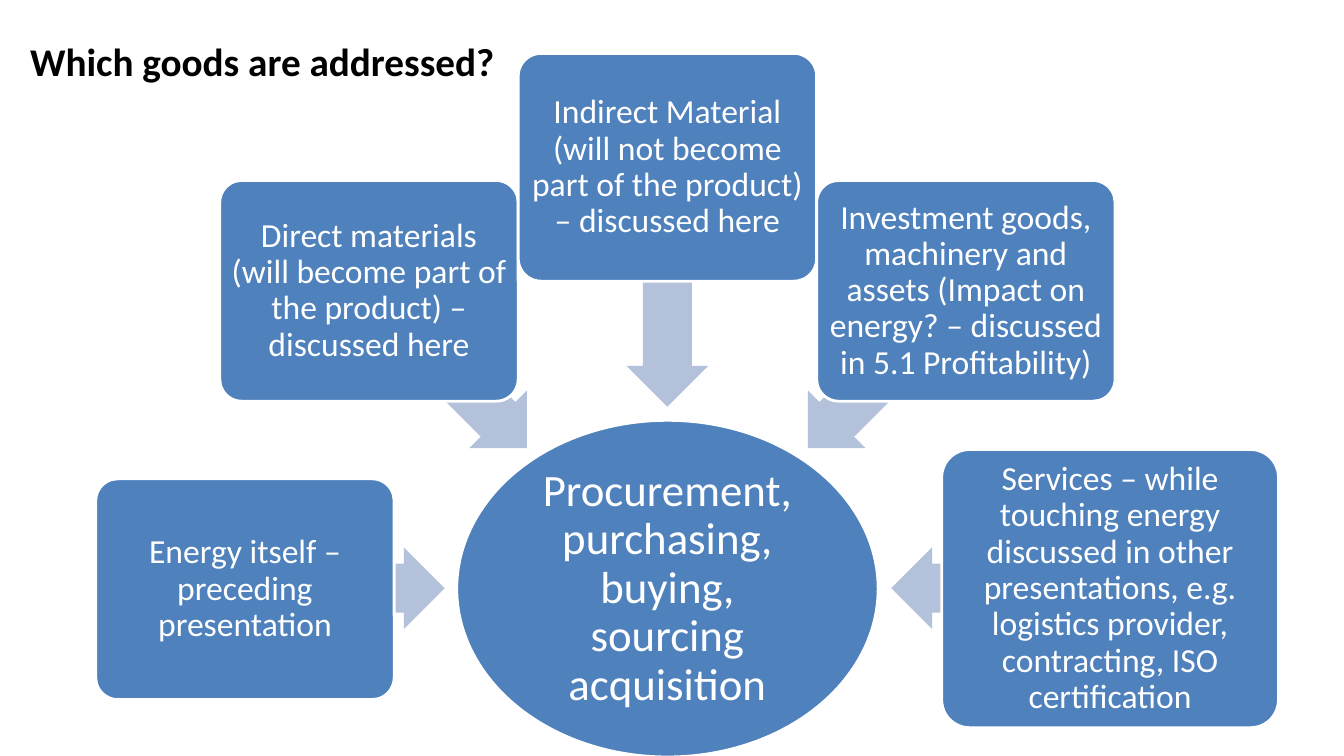
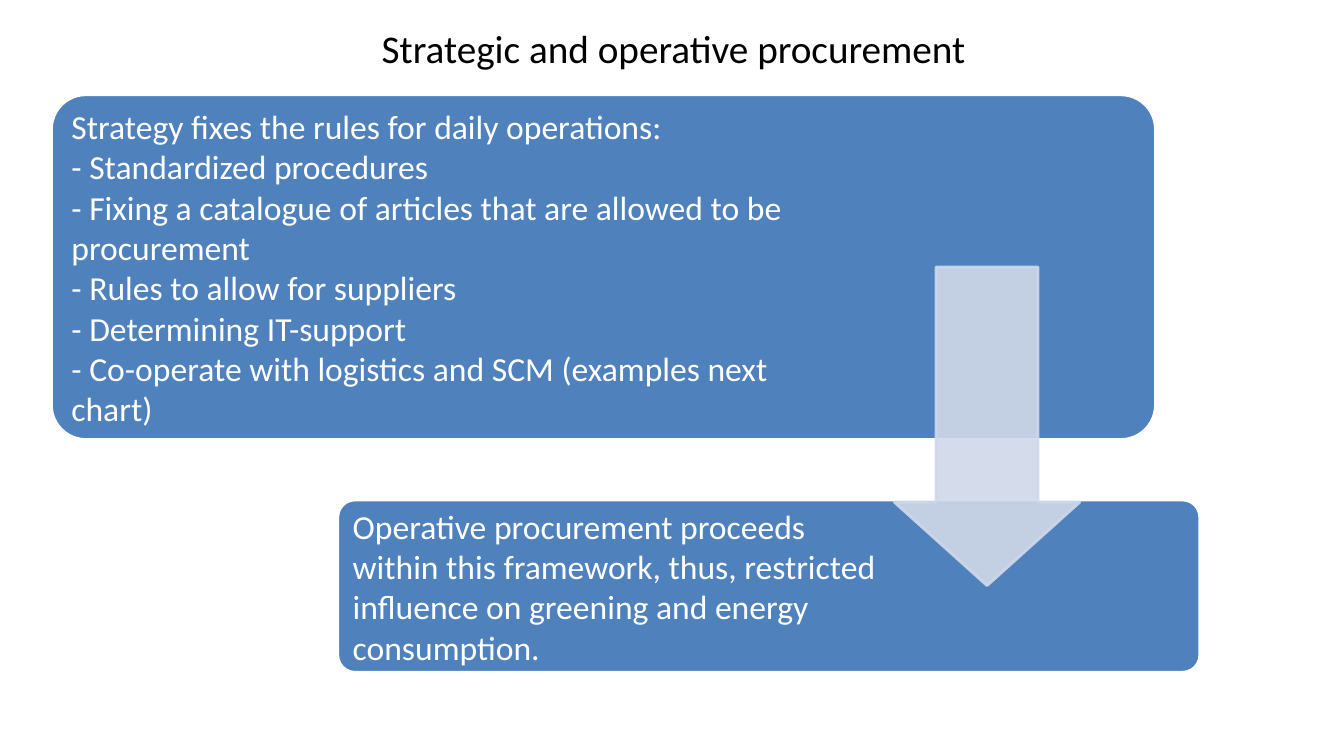
from dataclasses import dataclass

import pptx
import pptx.dml.color
import pptx.enum.shapes
import pptx.enum.text
import pptx.oxml
import pptx.oxml.ns
import pptx.util

Inches = pptx.util.Inches
Pt = pptx.util.Pt
SHAPES = pptx.enum.shapes.MSO_SHAPE
ALIGN = pptx.enum.text.PP_ALIGN
MIDDLE = pptx.enum.text.MSO_ANCHOR.MIDDLE

# Shared style
FONT = "Calibri"
BLUE, PALE_BLUE, LIGHT_BLUE = "4F81BD", "B3C1DB", "D0D8E8"
WHITE, BLACK = "FFFFFF", "000000"
TITLE_SIZE, HUB_SIZE, BODY_SIZE = 28, 32, 24
ARROW_HEIGHT = 0.81


@dataclass(frozen=True)
class Box:
    left: float
    top: float
    width: float
    height: float

    def lengths(self) -> tuple:
        return tuple(map(Inches, (self.left, self.top, self.width, self.height)))


@dataclass(frozen=True)
class Goods:
    text: str
    box: Box
    arrow_left: float
    arrow_top: float
    arrow_length: float
    arrow_rotation: int


@dataclass(frozen=True)
class Level:
    lines: tuple[str, ...]
    box: Box
    right_inset: float


GOODS = (
    Goods("Energy itself –preceding presentation",
          Box(0.95, 4.75, 2.96, 2.19), 2.43, 5.43, 1.98, 180),
    Goods("Direct materials (will become part of the product) – discussed here",
          Box(2.18, 1.79, 2.96, 2.19), 3.34, 3.26, 2.21, 225),
    Goods("Indirect Material (will not become part of the product) – discussed here",
          Box(5.14, 0.53, 2.96, 2.26), 5.43, 2.44, 2.38, 270),
    Goods("Investment goods, machinery and assets (Impact on energy? – discussed "
          "in 5.1 Profitability)",
          Box(8.1, 1.79, 2.96, 2.19), 7.69, 3.26, 2.21, 315),
    Goods("Services – while touching energy discussed in other presentations, "
          "e.g. logistics provider, contracting, ISO certification",
          Box(9.34, 4.46, 3.34, 2.76), 8.84, 5.43, 2.18, 0),
)

LEVELS = (
    Level(("Strategy fixes the rules for daily operations:",
           "- Standardized procedures",
           "- Fixing a catalogue of articles that are allowed to be procurement",
           "- Rules to allow for suppliers",
           "- Determining IT-support",
           "- Co-operate with logistics and SCM (examples next chart)"),
          Box(0.51, 0.94, 10.95, 3.42), 3.07),
    Level(("Operative procurement proceeds within this framework, thus, "
           "restricted influence on greening and energy consumption.",),
          Box(3.35, 4.96, 8.55, 1.71), 3.16),
)


def rgb(color: str) -> pptx.dml.color.RGBColor:
    return pptx.dml.color.RGBColor.from_string(color)


def write(shape, lines: tuple[str, ...], size: int, color: str, align,
          spacing: float = 1.0, bold: bool = False) -> None:
    frame = shape.text_frame
    frame.word_wrap = True
    frame.vertical_anchor = MIDDLE
    frame.text = "\n".join(lines)
    for paragraph in frame.paragraphs:
        paragraph.alignment = align
        paragraph.line_spacing = spacing
        paragraph.font.name = FONT
        paragraph.font.size = Pt(size)
        paragraph.font.bold = bold
        paragraph.font.color.rgb = rgb(color)


def set_insets(shape, inset: float, right: float | None = None) -> None:
    frame = shape.text_frame
    frame.margin_left = frame.margin_top = frame.margin_bottom = Inches(inset)
    frame.margin_right = Inches(inset if right is None else right)


def add_title(slide, text: str, box: Box, align, bold: bool = False) -> None:
    write(slide.shapes.add_textbox(*box.lengths()), (text,), TITLE_SIZE, BLACK,
          align, bold=bold)


def add_shape(slide, kind, box: Box, fill: str, line: str | None = None,
              adjustments: tuple[float, ...] = ()):
    shape = slide.shapes.add_shape(kind, *box.lengths())
    shape.shadow.inherit = False
    shape.fill.solid()
    shape.fill.fore_color.rgb = rgb(fill)
    if line:
        shape.line.color.rgb = rgb(line)
        shape.line.width = Pt(2)
    else:
        shape.line.fill.background()
    for index, value in enumerate(adjustments):
        shape.adjustments[index] = value
    return shape


def add_card(slide, box: Box):
    return add_shape(slide, SHAPES.ROUNDED_RECTANGLE, box, BLUE, WHITE, (0.1,))


def set_opacity(shape, percent: int) -> None:
    """Apply the opacity to both the fill and the line."""
    for color in shape.element.spPr.iter(pptx.oxml.ns.qn("a:srgbClr")):
        alpha = pptx.oxml.parse_xml(
            f'<a:alpha {pptx.oxml.ns.nsdecls("a")} val="{percent * 1000}"/>')
        color.append(alpha)


def build_goods(slide) -> None:
    add_title(slide, "Which goods are addressed?", Box(0.2, 0.13, 5.2, 0.94),
              ALIGN.LEFT, bold=True)

    # Hub
    hub = add_shape(slide, SHAPES.OVAL, Box(4.53, 4.17, 4.18, 3.34), BLUE, WHITE)
    set_insets(hub, 0.02)
    write(hub, ("Procurement, purchasing, buying, sourcing acquisition",),
          HUB_SIZE, WHITE, ALIGN.CENTER, 0.9)

    # Goods, each over the tail of its arrow
    for goods in GOODS:
        arrow_box = Box(goods.arrow_left, goods.arrow_top,
                        goods.arrow_length, ARROW_HEIGHT)
        arrow = add_shape(slide, SHAPES.LEFT_ARROW, arrow_box, PALE_BLUE,
                          adjustments=(0.6, 0.5))
        arrow.rotation = goods.arrow_rotation
        card = add_card(slide, goods.box)
        set_insets(card, 0.05)
        write(card, (goods.text,), BODY_SIZE, WHITE, ALIGN.CENTER, 0.9)


def build_levels(slide) -> None:
    add_title(slide, "Strategic and operative procurement",
              Box(2.18, 0, 9, 0.94), ALIGN.CENTER)

    # Strategic and operative level
    for level in LEVELS:
        card = add_card(slide, level.box)
        set_insets(card, 0.1, level.right_inset)
        write(card, level.lines, BODY_SIZE, WHITE, ALIGN.LEFT)

    # Arrow from strategy down to operations
    arrow = add_shape(slide, SHAPES.DOWN_ARROW, Box(8.87, 2.65, 1.84, 3.16),
                      LIGHT_BLUE, LIGHT_BLUE, (0.55, 0.45))
    set_opacity(arrow, 90)


def main() -> None:
    presentation = pptx.Presentation()
    presentation.slide_width = Inches(13.33)
    presentation.slide_height = Inches(7.5)
    blank = presentation.slide_layouts[6]
    for build in (build_goods, build_levels):
        build(presentation.slides.add_slide(blank))
    presentation.save("out.pptx")


if __name__ == "__main__":
    main()
